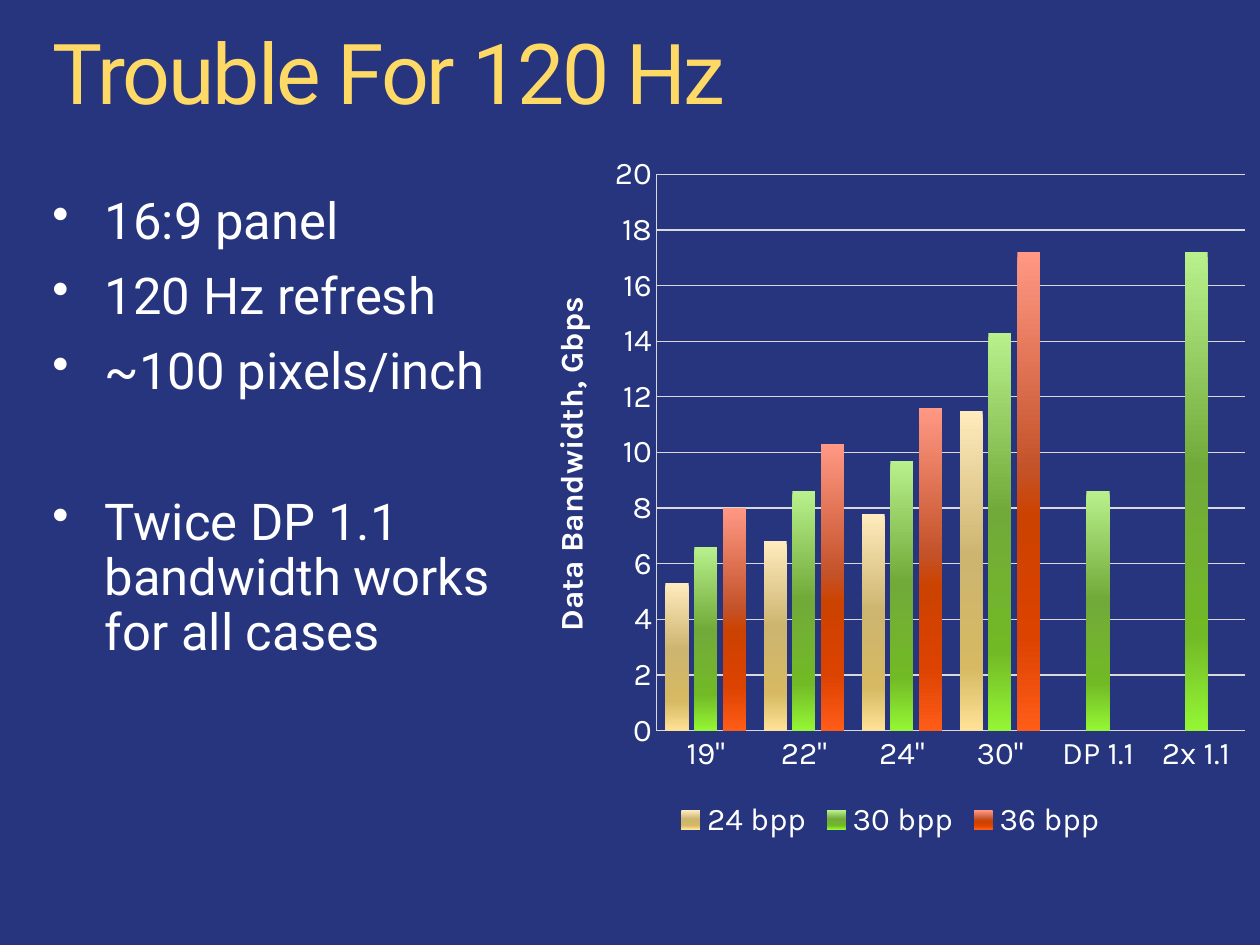
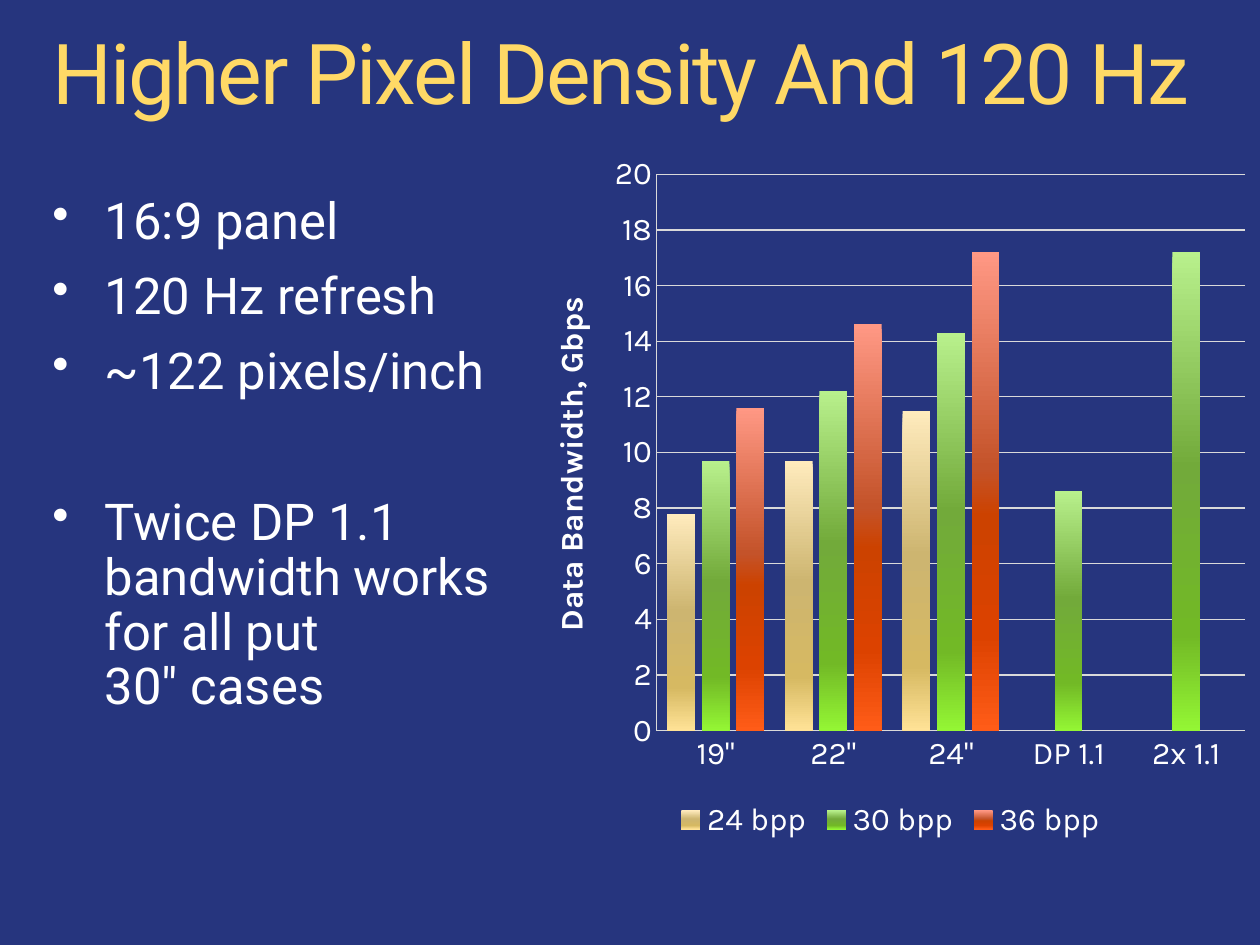
from lxml.etree import SubElement
from pptx import Presentation
from pptx.chart.data import CategoryChartData
from pptx.dml.color import RGBColor
from pptx.enum.chart import XL_CHART_TYPE, XL_LEGEND_POSITION, XL_TICK_MARK
from pptx.enum.text import MSO_ANCHOR, PP_ALIGN
from pptx.oxml import parse_xml
from pptx.oxml.ns import nsdecls, qn
from pptx.util import Inches, Pt

BACKGROUND, WHITE, GRID_LINE = "26357E", "FFFFFF", "D9D9D9"
TITLE_GRADIENT = [(0, "FFF2CC"), (41, "FFD966"), (100, "FFC000")]
SERIES_GRADIENTS = {
    "24 bpp": [(0, "FFEBBD"), (45, "CDB570"), (80, "D6B962"), (100, "FFE296")],
    "30 bpp": [(0, "B8F08C"), (45, "72AA3A"), (80, "72B926"), (100, "94F634")],
    "36 bpp": [(0, "FF9884"), (45, "C4532A"), (55, "CC4200"), (80, "DC4200"), (100, "FF5C18")],
}
COLUMNS, ROWS = 24, 18


def color(hex_code):
    return RGBColor.from_string(hex_code)


def gradient(stops):
    """Return a top-to-bottom gradient fill element."""
    marks = "".join(f'<a:gs pos="{position * 1000}"><a:srgbClr val="{code}"/></a:gs>'
                    for position, code in stops)
    return parse_xml(f'<a:gradFill {nsdecls("a")} rotWithShape="1"><a:gsLst>{marks}</a:gsLst>'
                     '<a:lin ang="5400000" scaled="0"/></a:gradFill>')


class BandwidthDeck:
    text_font, chart_font = "Roboto", "Karla"

    def __init__(self):
        self.deck = Presentation()
        self.deck.slide_width, self.deck.slide_height = Inches(10), Inches(7.5)
        fill = self.deck.slide_master.background.fill
        fill.solid()
        fill.fore_color.rgb = color(BACKGROUND)
        self.page = None

    def place(self, column, row, columns, rows):
        """Turn grid columns and rows into left, top, width and height."""
        across, down = self.deck.slide_width / COLUMNS, self.deck.slide_height / ROWS
        return int(column * across), int(row * down), int(columns * across), int(rows * down)

    def frame(self, shape):
        frame = shape.text_frame
        frame.margin_left = frame.margin_right = frame.margin_top = frame.margin_bottom = 0
        frame.word_wrap = True
        frame.vertical_anchor = MSO_ANCHOR.TOP
        return frame

    def title(self, text):
        self.page = self.deck.slides.add_slide(self.deck.slide_layouts[5])
        box = self.page.shapes.title
        box.left, box.top, box.width, box.height = self.place(1, 0.6, 22, 1.73)
        frame = self.frame(box)
        frame.text = text
        para = frame.paragraphs[0]
        para.alignment, para.line_spacing = PP_ALIGN.LEFT, 0.9
        span = para.runs[0]
        span.font.size, span.font.name = Pt(48), self.text_font
        properties = span.font._element
        properties.set("spc", "-120")
        properties.insert(0, gradient(TITLE_GRADIENT))

    def bullets(self, facts, conclusion):
        """List the facts, then the conclusion one blank line further down."""
        box = self.page.shapes.add_textbox(*self.place(1, 3.72, 9.6, 9))
        frame = self.frame(box)
        for index, text in enumerate([*facts, conclusion]):
            para = frame.paragraphs[0] if index == 0 else frame.add_paragraph()
            para.text = text
            self.bullet(para)
            para.line_spacing = 0.9
            if index:
                para.space_before = Pt(54.8 if text == conclusion else 11.7)
            for span in para.runs:
                span.font.size, span.font.name = Pt(29), self.text_font
                span.font.color.rgb = color(WHITE)

    def bullet(self, para):
        properties = para._p.get_or_add_pPr()
        indent = self.place(1, 0, 0, 0)[0]
        properties.set("marL", str(indent))
        properties.set("indent", str(-indent))
        SubElement(SubElement(properties, qn("a:buClr")), qn("a:srgbClr"), val=WHITE)
        SubElement(properties, qn("a:buSzPct"), val="95000")
        SubElement(properties, qn("a:buChar"), char="•")

    def bandwidth_chart(self, categories, series_values):
        data = CategoryChartData()
        data.categories = categories
        for name, values in zip(SERIES_GRADIENTS, series_values):
            padding = [None] * (len(categories) - len(values))
            data.add_series(name, [*values, *padding])
        chart = self.page.shapes.add_chart(XL_CHART_TYPE.COLUMN_CLUSTERED,
                                           *self.place(9.92, 2.69, 14.08, 13.4), data).chart
        chart.font.size, chart.font.name = Pt(18), self.chart_font
        chart.font.color.rgb = color(WHITE)
        chart.has_title = False
        chart.has_legend = True
        chart.legend.position = XL_LEGEND_POSITION.BOTTOM
        chart.legend.include_in_layout = False

        plot = chart.plots[0]
        plot.gap_width, plot.overlap, plot.vary_by_categories = 75, -25, False
        for series in plot.series:
            series.invert_if_negative = False
            series.format.fill.background()
            properties = series._element.spPr
            properties.replace(properties.find(qn("a:noFill")),
                               gradient(SERIES_GRADIENTS[series.name]))
        self.axes(chart)
        self.plot_layout(chart, x=0.184, y=0.047, w=0.796, h=0.791)

    def axes(self, chart):
        scale = chart.value_axis
        scale.minimum_scale, scale.maximum_scale, scale.major_unit = 0, 20, 2
        scale.has_major_gridlines = True
        for axis in (chart.category_axis, scale):
            axis.major_tick_mark = axis.minor_tick_mark = XL_TICK_MARK.NONE
        for line in (scale.major_gridlines.format.line, scale.format.line,
                     chart.category_axis.format.line):
            line.width = Pt(0.75)
            line.color.rgb = color(GRID_LINE)
        frame = scale.axis_title.text_frame
        frame.text = "Data Bandwidth, Gbps"
        font = frame.paragraphs[0].runs[0].font
        font.size, font.name, font.bold = Pt(18), self.chart_font, True
        font.color.rgb = color(WHITE)

    def plot_layout(self, chart, **shares):
        """Fix the inner plot area as shares of the chart's size."""
        area = chart._chartSpace.chart.plotArea
        for old in area.findall(qn("c:layout")):
            area.remove(old)
        layout = parse_xml(f'<c:layout {nsdecls("c")}><c:manualLayout/></c:layout>')
        manual = layout[0]
        SubElement(manual, qn("c:layoutTarget"), val="inner")
        for side in "xy":
            SubElement(manual, qn(f"c:{side}Mode"), val="edge")
        for side, share in shares.items():
            SubElement(manual, qn(f"c:{side}"), val=str(share))
        area.insert(0, layout)


def main():
    slides = BandwidthDeck()
    ports = ["DP 1.1", "2x 1.1"]
    port_limits = [8.6, 17.2]

    slides.title("Trouble For 120 Hz")
    slides.bullets(["16:9 panel", "120 Hz refresh", "~100 pixels/inch"],
                   "Twice DP 1.1 bandwidth works for all cases")
    slides.bandwidth_chart(['19"', '22"', '24"', '30"', *ports],
                           [[5.3, 6.8, 7.8, 11.5],
                            [6.6, 8.6, 9.7, 14.3, *port_limits],
                            [8, 10.3, 11.6, 17.2]])

    slides.title("Higher Pixel Density And 120 Hz")
    slides.bullets(["16:9 panel", "120 Hz refresh", "~122 pixels/inch"],
                   'Twice DP 1.1 bandwidth works for all put\v30" cases')
    slides.bandwidth_chart(['19"', '22"', '24"', *ports],
                           [[7.8, 9.7, 11.5],
                            [9.7, 12.2, 14.3, *port_limits],
                            [11.6, 14.6, 17.2]])
    slides.deck.save("out.pptx")


if __name__ == "__main__":
    main()
